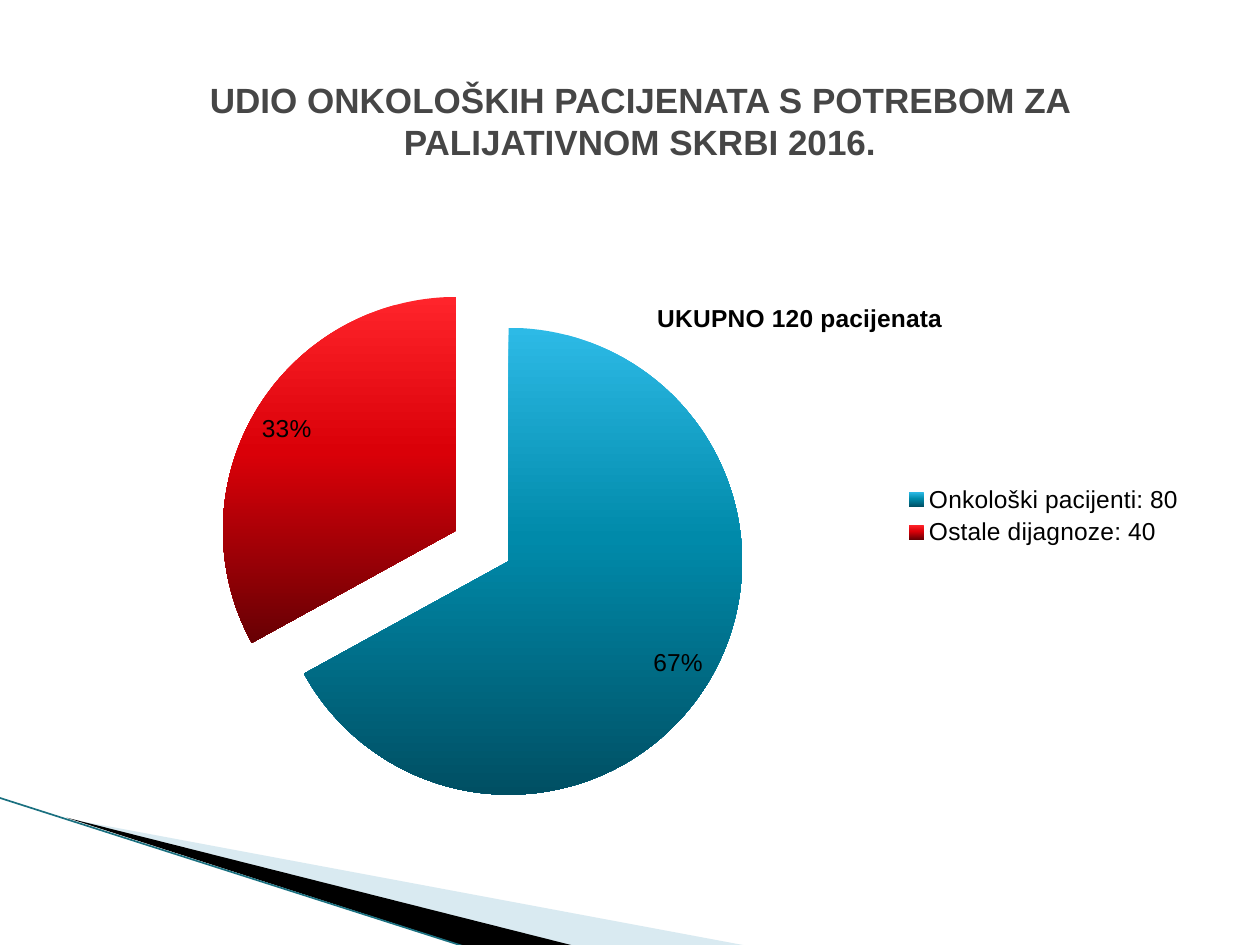
import pptx
import pptx.chart.data
import pptx.dml.color
import pptx.enum.chart
import pptx.enum.shapes
import pptx.enum.text
import pptx.oxml
import pptx.oxml.ns
import pptx.util

Inches = pptx.util.Inches
RGBColor = pptx.dml.color.RGBColor
NS = pptx.oxml.ns.nsdecls("a", "c")

BLACK = RGBColor(0, 0, 0)
GREY = RGBColor(0x46, 0x46, 0x46)
PALE_BLUE = RGBColor(0xA0, 0xCB, 0xDC)
TEAL = RGBColor(0x1A, 0x70, 0x80)
BLUES = (RGBColor(0x2D, 0xBA, 0xE6), RGBColor(0x00, 0x8A, 0xAA), RGBColor(0x00, 0x4F, 0x63))
REDS = (RGBColor(0xFF, 0x24, 0x2B), RGBColor(0xDA, 0x00, 0x08), RGBColor(0x68, 0x00, 0x04))


class SlideBuilder:
    font = "Arial"

    def __init__(self, prs):
        self.s = prs.slides.add_slide(prs.slide_layouts[6])

    def style(self, font, size, color=BLACK, bold=False):
        font.name = self.font
        font.size = pptx.util.Pt(size)
        font.bold = bold
        font.color.rgb = color

    def wedge(self, points, color, opacity=None):
        pts = [(Inches(x), Inches(y)) for x, y in points]
        fb = self.s.shapes.build_freeform(*pts[0], scale=1.0)
        fb.add_line_segments(pts[1:], close=True)
        sp = fb.convert_to_shape()
        sp.shadow.inherit = False
        sp.fill.solid()
        sp.fill.fore_color.rgb = color
        sp.line.fill.background()
        if opacity is not None:
            clr = sp._element.spPr.find(".//" + pptx.oxml.ns.qn("a:srgbClr"))
            clr.append(pptx.oxml.parse_xml(f'<a:alpha {NS} val="{opacity * 1000}"/>'))

    def line(self, start, end, color, width):
        x1, y1, x2, y2 = (Inches(v) for v in start + end)
        sp = self.s.shapes.add_connector(
            pptx.enum.shapes.MSO_CONNECTOR.STRAIGHT, x1, y1, x2, y2)
        sp.line.color.rgb = color
        sp.line.width = pptx.util.Pt(width)
        sp._element.spPr.append(pptx.oxml.parse_xml(f"<a:effectLst {NS}/>"))

    def title(self, text, box, size):
        tf = self.s.shapes.add_textbox(*(Inches(v) for v in box)).text_frame
        tf.word_wrap = True
        tf.vertical_anchor = pptx.enum.text.MSO_ANCHOR.MIDDLE
        p = tf.paragraphs[0]
        p.alignment = pptx.enum.text.PP_ALIGN.CENTER
        r = p.add_run()
        r.text = text
        self.style(r.font, size, GREY, True)

    def gradient(self, point, colors):
        point.format.fill.solid()
        spPr = point.format.fill._xPr
        stops = "".join(f'<a:gs pos="{pos}"><a:srgbClr val="{c}"/></a:gs>'
                        for pos, c in zip((0, 45000, 100000), colors))
        grad = pptx.oxml.parse_xml(
            f'<a:gradFill {NS} rotWithShape="1"><a:gsLst>{stops}</a:gsLst>'
            '<a:lin ang="5400000" scaled="0"/></a:gradFill>')
        spPr.replace(spPr.find(pptx.oxml.ns.qn("a:solidFill")), grad)
        point.format.line.fill.background()

    def place(self, parent, x, y, w=None, h=None):
        layout = parent.find(pptx.oxml.ns.qn("c:layout"))
        if layout is not None:
            parent.remove(layout)
        inner = '<c:layoutTarget val="inner"/>' if w else ""
        size = f'<c:w val="{w}"/><c:h val="{h}"/>' if w else ""
        layout = pptx.oxml.parse_xml(
            f'<c:layout {NS}><c:manualLayout>{inner}<c:xMode val="edge"/><c:yMode val="edge"/>'
            f'<c:x val="{x}"/><c:y val="{y}"/>{size}</c:manualLayout></c:layout>')
        tx = parent.find(pptx.oxml.ns.qn("c:tx"))
        parent.insert(0 if tx is None else 1, layout)

    def pie(self, name, shares, palettes, box, size, explosion):
        data = pptx.chart.data.CategoryChartData()
        data.categories = list(shares)
        data.add_series(name, shares.values())
        chart = self.s.shapes.add_chart(
            pptx.enum.chart.XL_CHART_TYPE.PIE, *(Inches(v) for v in box), data).chart
        self.style(chart.font, size)
        chart.has_title = True
        r = chart.chart_title.text_frame.paragraphs[0].add_run()
        r.text = name
        self.style(r.font, size, bold=True)
        self.place(chart.chart_title._element, 0.52, 0.15)

        chart.has_legend = True
        chart.legend.position = pptx.enum.chart.XL_LEGEND_POSITION.RIGHT
        chart.legend.include_in_layout = False
        self.style(chart.legend.font, size)

        plot = chart.plots[0]
        plot.vary_by_categories = True
        plot.has_data_labels = True
        labels = plot.data_labels
        labels.show_percentage = True
        labels.show_value = False
        labels.number_format = "0%"
        labels.number_format_is_linked = False
        labels.position = pptx.enum.chart.XL_LABEL_POSITION.INSIDE_END
        self.style(labels.font, size)
        series = plot.series[0]
        for i, colors in enumerate(palettes):
            self.gradient(series.points[i], colors)
        first = series._element.find(pptx.oxml.ns.qn("c:dPt"))
        first.addprevious(pptx.oxml.parse_xml(f'<c:explosion {NS} val="{explosion}"/>'))
        self.place(chart._chartSpace.chart.plotArea, 0.137, 0.125, 0.466, 0.846)


def main():
    prs = pptx.Presentation()
    prs.slide_width, prs.slide_height = Inches(10), Inches(7.5)
    slide = SlideBuilder(prs)
    slide.wedge([(0.55, 6.5), (5.95, 7.51), (4.56, 7.51)], PALE_BLUE, 40)
    slide.wedge([(0.53, 6.49), (4.57, 7.51), (3.72, 7.52)], BLACK)
    slide.line((-0.01, 6.33), (3.71, 7.52), TEAL, 0.95)
    slide.pie("UKUPNO 120 pacijenata",
              {"Onkološki pacijenti: 80": 67, "Ostale dijagnoze: 40": 33},
              (BLUES, REDS), (0.5, 1.62, 9, 4.95), 14, 13)
    slide.title("UDIO ONKOLOŠKIH PACIJENATA S POTREBOM ZA PALIJATIVNOM SKRBI 2016.",
                (0.58, 0.33, 9, 1.25), 20)
    prs.save("out.pptx")


if __name__ == "__main__":
    main()
